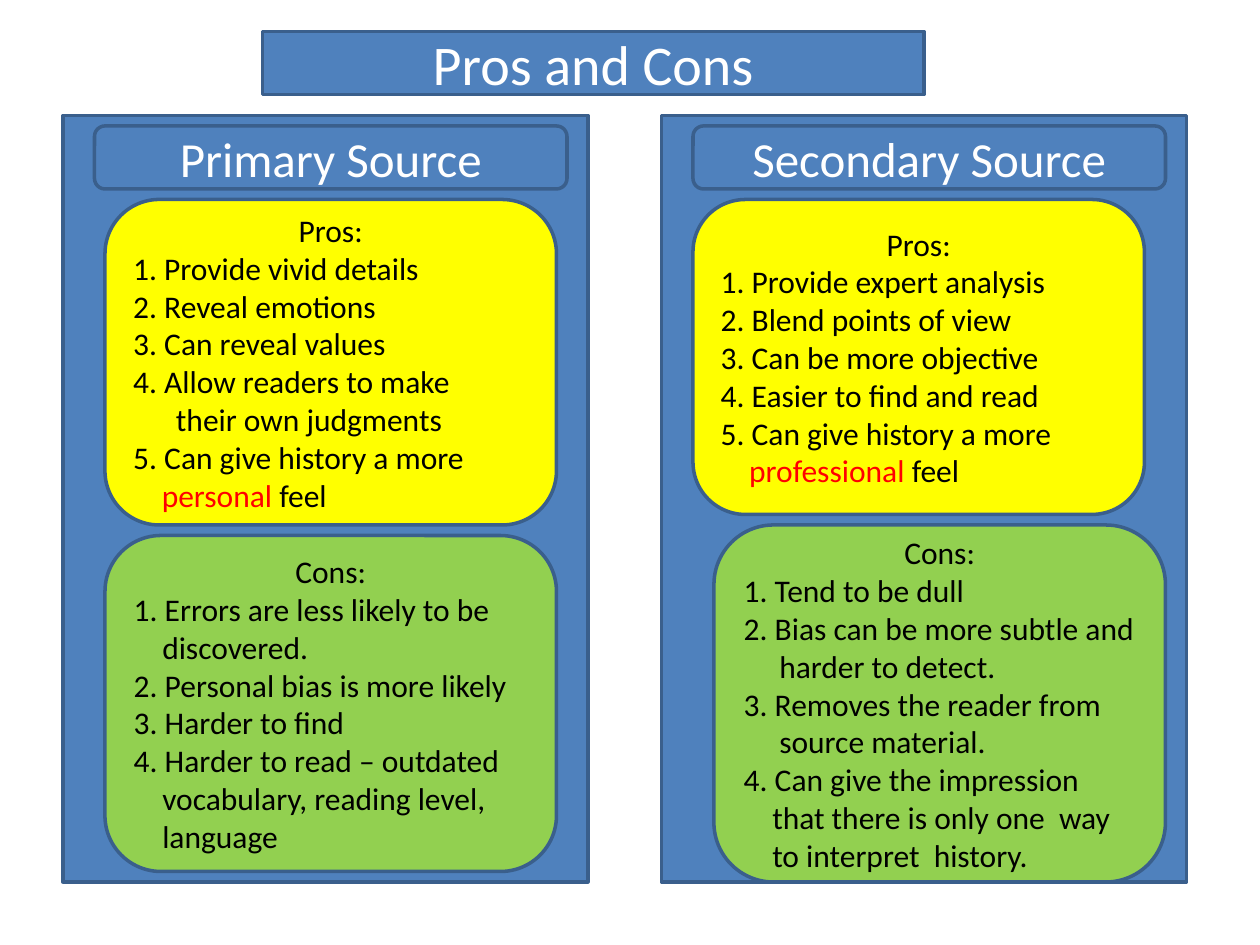
from dataclasses import dataclass

from pptx import Presentation
from pptx.dml.color import RGBColor
from pptx.enum.shapes import MSO_SHAPE as Preset
from pptx.enum.text import MSO_ANCHOR as Anchor, MSO_AUTO_SIZE as AutoSize, PP_ALIGN as Align
from pptx.oxml import parse_xml
from pptx.oxml.ns import nsdecls
from pptx.shapes.autoshape import Shape
from pptx.slide import Slide
from pptx.text.text import _Paragraph as Paragraph
from pptx.util import Pt

BLUE = RGBColor(0x4F, 0x81, 0xBD)
OUTLINE = RGBColor(0x3A, 0x5F, 0x8C)
YELLOW = RGBColor(0xFF, 0xFF, 0x00)
GREEN = RGBColor(0x92, 0xD0, 0x50)
RED = RGBColor(0xFF, 0x00, 0x00)
BLACK = RGBColor(0x00, 0x00, 0x00)
WHITE = RGBColor(0xFF, 0xFF, 0xFF)

FONT = "Calibri"
PANEL_TOP, PANEL_WIDTH, PANEL_HEIGHT = 66, 300, 438
HEADING_INSET = 18
CARD_WIDTH = 258


@dataclass(frozen=True)
class Line:
    """One line of a card; the accent word leads the text in red."""
    text: str
    indent: float = 0
    accent: str = ""


@dataclass(frozen=True)
class Card:
    heading: str
    left: float
    top: float
    height: float
    fill: RGBColor
    lines: tuple[Line, ...]


@dataclass(frozen=True)
class Panel:
    heading: str
    left: float
    cards: tuple[Card, ...]


PANELS = (
    Panel("Primary Source", 36, (
        Card("Pros:", 60, 114, 186, YELLOW, (
            Line("1. Provide vivid details"),
            Line("2. Reveal emotions"),
            Line("3. Can reveal values"),
            Line("4. Allow readers to make"),
            Line("their own judgments", 24.4),
            Line("5. Can give history a more"),
            Line(" feel", 16.3, "personal"),
        )),
        Card("Cons:", 60, 306, 192, GREEN, (
            Line("1. Errors are less likely to be"),
            Line("discovered.", 16.3),
            Line("2. Personal bias is more likely"),
            Line("3. Harder to find"),
            Line("4. Harder to read – outdated"),
            Line("vocabulary, reading level,", 16.3),
            Line("language", 16.3),
        )),
    )),
    Panel("Secondary Source", 378, (
        Card("Pros:", 396, 114, 180, YELLOW, (
            Line("1. Provide expert analysis"),
            Line("2. Blend points of view"),
            Line("3. Can be more objective"),
            Line("4. Easier to find and read"),
            Line("5. Can give history a more"),
            Line(" feel", 16.3, "professional"),
        )),
        Card("Cons:", 408, 300, 204, GREEN, (
            Line("1. Tend to be dull"),
            Line("2. Bias can be more subtle and"),
            Line("harder to detect.", 20.3),
            Line("3. Removes the reader from"),
            Line("source material.", 20.3),
            Line("4. Can give the impression"),
            Line("that there is only one  way", 16.3),
            Line("to interpret  history.", 16.3),
        )),
    )),
)


def paint(box: Shape, fill: RGBColor) -> None:
    box.fill.solid()
    box.fill.fore_color.rgb = fill
    box.line.color.rgb = OUTLINE
    box.line.width = Pt(2)
    box.shadow.inherit = False


def add_box(page: Slide, preset: Preset, left: float, top: float,
            width: float, height: float, fill: RGBColor) -> Shape:
    box = page.shapes.add_shape(preset, Pt(left), Pt(top), Pt(width), Pt(height))
    paint(box, fill)
    return box


def format_paragraph(para: Paragraph, size: float, color: RGBColor, align: Align) -> None:
    para.alignment = align
    for span in para.runs:
        span.font.name = FONT
        span.font.size = Pt(size)
        span.font.color.rgb = color


def set_heading(box: Shape, text: str, size: float) -> None:
    frame = box.text_frame
    frame.text = text
    frame.word_wrap = True
    frame.auto_size = AutoSize.NONE
    frame.vertical_anchor = Anchor.MIDDLE
    format_paragraph(frame.paragraphs[0], size, WHITE, Align.CENTER)


def format_title(title: Shape) -> None:
    title.left, title.top, title.width, title.height = Pt(150), Pt(18), Pt(378), Pt(36)
    outline = parse_xml(f'<a:prstGeom {nsdecls("a")} prst="roundRect"><a:avLst/></a:prstGeom>')
    title._element.spPr.append(outline)
    paint(title, BLUE)
    set_heading(title, "Pros and Cons", 32)


def add_card(page: Slide, card: Card) -> None:
    box = add_box(page, Preset.ROUNDED_RECTANGLE, card.left, card.top,
                  CARD_WIDTH, card.height, card.fill)
    frame = box.text_frame
    frame.word_wrap = True
    frame.vertical_anchor = Anchor.MIDDLE
    frame.text = card.heading
    format_paragraph(frame.paragraphs[0], 18, BLACK, Align.CENTER)
    for line in card.lines:
        para = frame.add_paragraph()
        para.text = line.accent or line.text
        if line.accent:
            para.add_run().text = line.text
        format_paragraph(para, 18, BLACK, Align.LEFT)
        if line.accent:
            para.runs[0].font.color.rgb = RED
        if line.indent:
            para._p.get_or_add_pPr().set("marL", str(Pt(line.indent)))


def add_panel(page: Slide, panel: Panel) -> None:
    add_box(page, Preset.RECTANGLE, panel.left, PANEL_TOP, PANEL_WIDTH, PANEL_HEIGHT, BLUE)
    heading = add_box(page, Preset.ROUNDED_RECTANGLE, panel.left + HEADING_INSET, 72,
                      270, 36, BLUE)
    set_heading(heading, panel.heading, 28)
    for card in panel.cards:
        add_card(page, card)


def main() -> None:
    deck = Presentation()
    deck.slide_width, deck.slide_height = Pt(720), Pt(540)
    page = deck.slides.add_slide(deck.slide_layouts.get_by_name("Title Only"))
    format_title(page.shapes.title)
    for panel in PANELS:
        add_panel(page, panel)
    deck.save("out.pptx")


if __name__ == "__main__":
    main()
